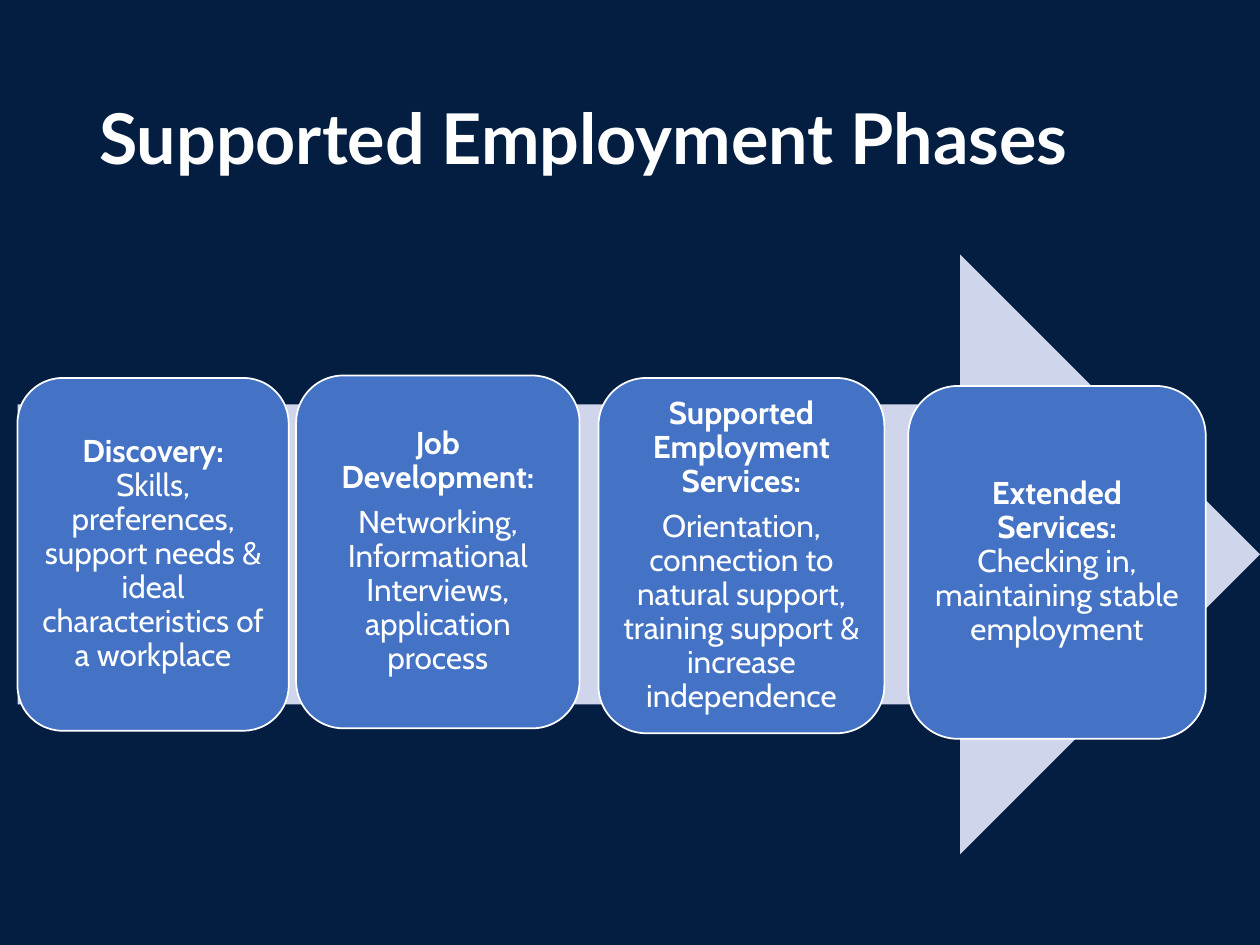
from dataclasses import dataclass

from pptx import Presentation
from pptx.dml.color import RGBColor
from pptx.enum.shapes import MSO_SHAPE
from pptx.enum.text import MSO_ANCHOR, MSO_AUTO_SIZE, PP_ALIGN
from pptx.util import Pt

ARROW, CARD = MSO_SHAPE.RIGHT_ARROW, MSO_SHAPE.ROUNDED_RECTANGLE
LEFT, CENTER = PP_ALIGN.LEFT, PP_ALIGN.CENTER
MIDDLE = MSO_ANCHOR.MIDDLE
NO_AUTOFIT = MSO_AUTO_SIZE.NONE


@dataclass(frozen=True)
class Theme:
    background: RGBColor = RGBColor(0x04, 0x1E, 0x42)
    arrow: RGBColor = RGBColor(0xCF, 0xD5, 0xEA)
    card: RGBColor = RGBColor(0x44, 0x72, 0xC4)
    white: RGBColor = RGBColor(0xFF, 0xFF, 0xFF)
    title_font: str = "Lato"
    body_font: str = "Cabin"
    title_size: int = 40
    body_size: int = 18


theme = Theme()


def add_filled_shape(kind, box, color):
    shape = slide.shapes.add_shape(kind, *map(Pt, box))
    shape.shadow.inherit = False
    shape.fill.solid()
    shape.fill.fore_color.rgb = color
    return shape


def format_run(run, font_name, size, bold):
    run.font.name = font_name
    run.font.size = Pt(size)
    run.font.bold = bold
    run.font.color.rgb = theme.white


# Slide and background
presentation = Presentation()
presentation.slide_width, presentation.slide_height = Pt(720), Pt(540)
slide = presentation.slides.add_slide(presentation.slide_layouts[5])
slide.background.fill.solid()
slide.background.fill.fore_color.rgb = theme.background

# Title
title = slide.shapes.title
title.left, title.top, title.width, title.height = map(Pt, (49.5, 28.75, 621, 104.4))
title.text_frame.text = "Supported Employment Phases"
title.text_frame.auto_size = NO_AUTOFIT
title.text_frame.vertical_anchor = MIDDLE
paragraph = title.text_frame.paragraphs[0]
paragraph.alignment = LEFT
paragraph.line_spacing = 0.9
format_run(paragraph.runs[0], theme.title_font, theme.title_size, True)

# Arrow behind the phases
arrow = add_filled_shape(ARROW, (10, 145.5, 710, 342.7), theme.arrow)
arrow.line.fill.background()

# Phase cards: box (left, top, width, height), heading, separator, description
LINE_BREAK, NEW_PARAGRAPH = "\v", "\n"
phases = [
    ((10, 216, 155, 201.6), "Discovery:", LINE_BREAK,
     "Skills, preferences, support needs &\videal characteristics of a workplace"),
    ((169.2, 214.6, 162, 201.6), "Job Development:", NEW_PARAGRAPH,
     "Networking, Informational Interviews, application process"),
    ((342, 216, 163.4, 203), "Supported Employment Services:", NEW_PARAGRAPH,
     "Orientation, connection to natural support, training support & "
     "increase independence"),
    ((519, 220.6, 170, 201.6), "Extended Services:", LINE_BREAK,
     "Checking in, maintaining stable employment"),
]
for box, heading, separator, description in phases:
    card = add_filled_shape(CARD, box, theme.card)
    card.line.color.rgb = theme.white
    card.line.width = Pt(1)

    frame = card.text_frame
    frame.word_wrap = True
    frame.vertical_anchor = MIDDLE
    frame.margin_left = frame.margin_right = Pt(5)
    frame.margin_top = frame.margin_bottom = Pt(5)
    frame.text = heading + separator + description
    for paragraph in frame.paragraphs:
        paragraph.alignment = CENTER
        paragraph.line_spacing = 0.9
        paragraph.space_after = Pt(6.3)
        for run in paragraph.runs:
            format_run(run, theme.body_font, theme.body_size, run.text == heading)

presentation.save("out.pptx")
